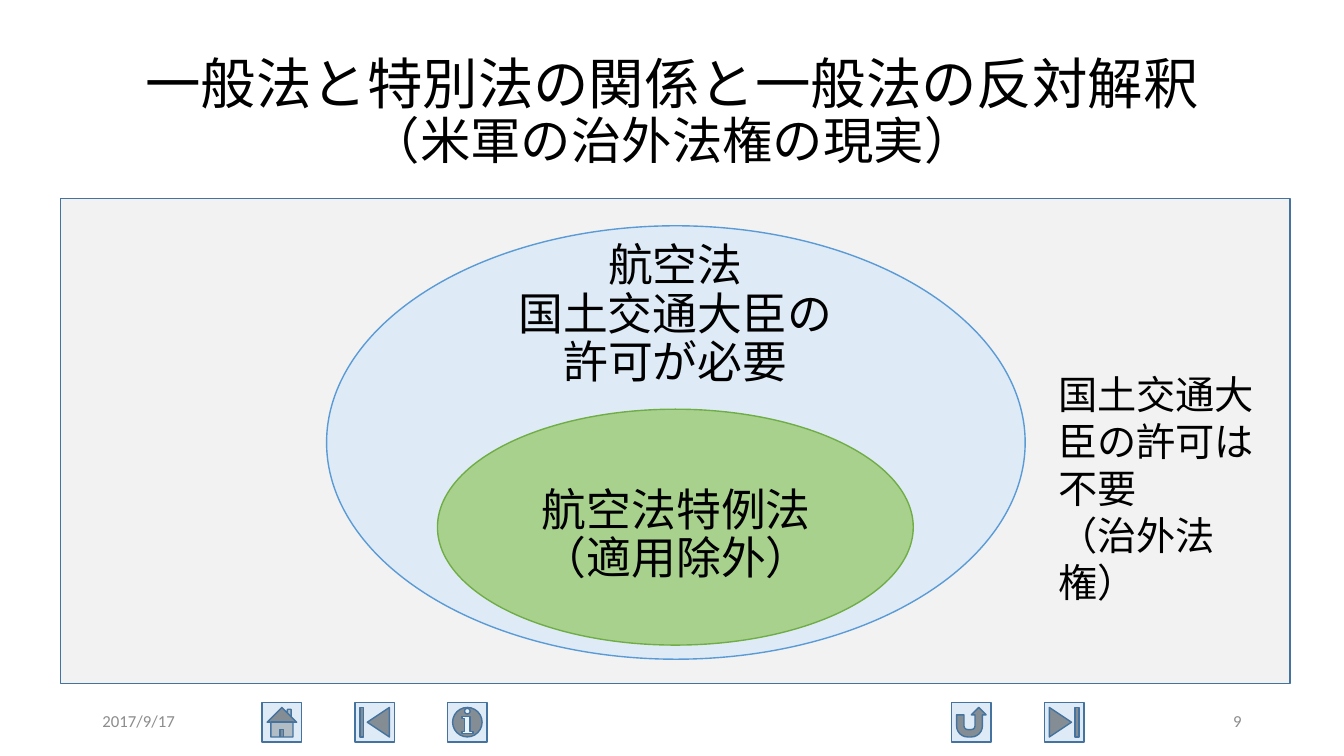
"""Build a slide showing how a special law sits inside a general law."""
from pptx import Presentation
from pptx.dml.color import RGBColor
from pptx.enum.shapes import MSO_SHAPE
from pptx.enum.text import MSO_ANCHOR, PP_ALIGN
from pptx.util import Inches, Pt

THEME = {
    "font": "Calibri", "ink": "000000", "muted": "8C8C8C",
    "panel": "F2F2F2", "general": "DEEBF7", "special": "A9D18E",
    "edge": "43739E", "general_edge": "5B9BD5", "special_edge": "70AD47",
    "title": 39.6, "subtitle": 36, "law": 32, "side": 28, "footer": 12,
}

deck = Presentation()
deck.slide_width, deck.slide_height = Inches(13.333), Inches(7.5)
page = deck.slides.add_slide(deck.slide_layouts[6])
COLUMN, ROW = deck.slide_width / 100, deck.slide_height / 100


def draw(kind, left, top, width, height, fill, edge):
    """Add a filled, outlined shape placed in percent of the slide."""
    shape = page.shapes.add_shape(
        kind, int(left * COLUMN), int(top * ROW), int(width * COLUMN), int(height * ROW))
    shape.shadow.inherit = False
    shape.fill.solid()
    shape.fill.fore_color.rgb = RGBColor.from_string(THEME[fill])
    shape.line.color.rgb = RGBColor.from_string(THEME[edge])
    shape.line.width = Pt(1)


def write(lines, left, top, width, height, align, anchor=MSO_ANCHOR.MIDDLE,
          spacing=1.0, ink="ink", inset=0.1):
    """Add one paragraph of (text, size) lines placed in percent of the slide."""
    box = page.shapes.add_textbox(
        int(left * COLUMN), int(top * ROW), int(width * COLUMN), int(height * ROW))
    frame = box.text_frame
    formats = {"word_wrap": True, "vertical_anchor": anchor,
               "margin_left": Inches(inset), "margin_right": Inches(inset)}
    for name, value in formats.items():
        setattr(frame, name, value)
    para = frame.paragraphs[0]
    para.alignment, para.line_spacing = align, spacing
    for index, (text, size) in enumerate(lines):
        if index:
            para.add_line_break()
        span = para.add_run()
        span.text = text
        for name, value in {"name": THEME["font"], "size": Pt(THEME[size])}.items():
            setattr(span.font, name, value)
        span.font.color.rgb = RGBColor.from_string(THEME[ink])


buttons = [
    (19.5, [MSO_SHAPE.ACTION_BUTTON_HOME, MSO_SHAPE.ACTION_BUTTON_BEGINNING,
            MSO_SHAPE.ACTION_BUTTON_INFORMATION]),
    (70.8, [MSO_SHAPE.ACTION_BUTTON_RETURN, MSO_SHAPE.ACTION_BUTTON_END]),
]
for start, kinds in buttons:
    for index, kind in enumerate(kinds):
        draw(kind, start + 6.9 * index, 92.93, 2.95, 5.2, "general", "edge")

draw(MSO_SHAPE.RECTANGLE, 4.5, 26.27, 91.5, 64.13, "panel", "edge")
draw(MSO_SHAPE.OVAL, 24.3, 29.87, 51.98, 57.33, "general", "general_edge")
draw(MSO_SHAPE.OVAL, 32.55, 54.13, 35.4, 31.2, "special", "special_edge")

write([("一般法と特別法の関係と一般法の反対解釈", "title"),
       ("（米軍の治外法権の現実）", "subtitle")],
      6.88, 5.33, 86.25, 19.33, PP_ALIGN.CENTER, spacing=0.9)
write([("航空法", "law"), ("国土交通大臣の許可が必要", "law")],
      36.6, 31.07, 27.3, 21.33, PP_ALIGN.CENTER, spacing=0.9, inset=0.25)
write([("航空法特例法", "law"), ("（適用除外）", "law")],
      37.8, 63.07, 25.05, 15.6, PP_ALIGN.CENTER, spacing=0.9, inset=0.25)
write([("国土交通大臣の許可は不要", "side"), ("（治外法権）", "side")],
      78, 48.27, 16.58, 26.53, PP_ALIGN.LEFT, anchor=MSO_ANCHOR.TOP)

for text, left, align in [("2017/9/17", 6.88, PP_ALIGN.LEFT), ("9", 70.63, PP_ALIGN.RIGHT)]:
    write([(text, "footer")], left, 92.67, 22.5, 5.33, align, ink="muted")

deck.save("out.pptx")
